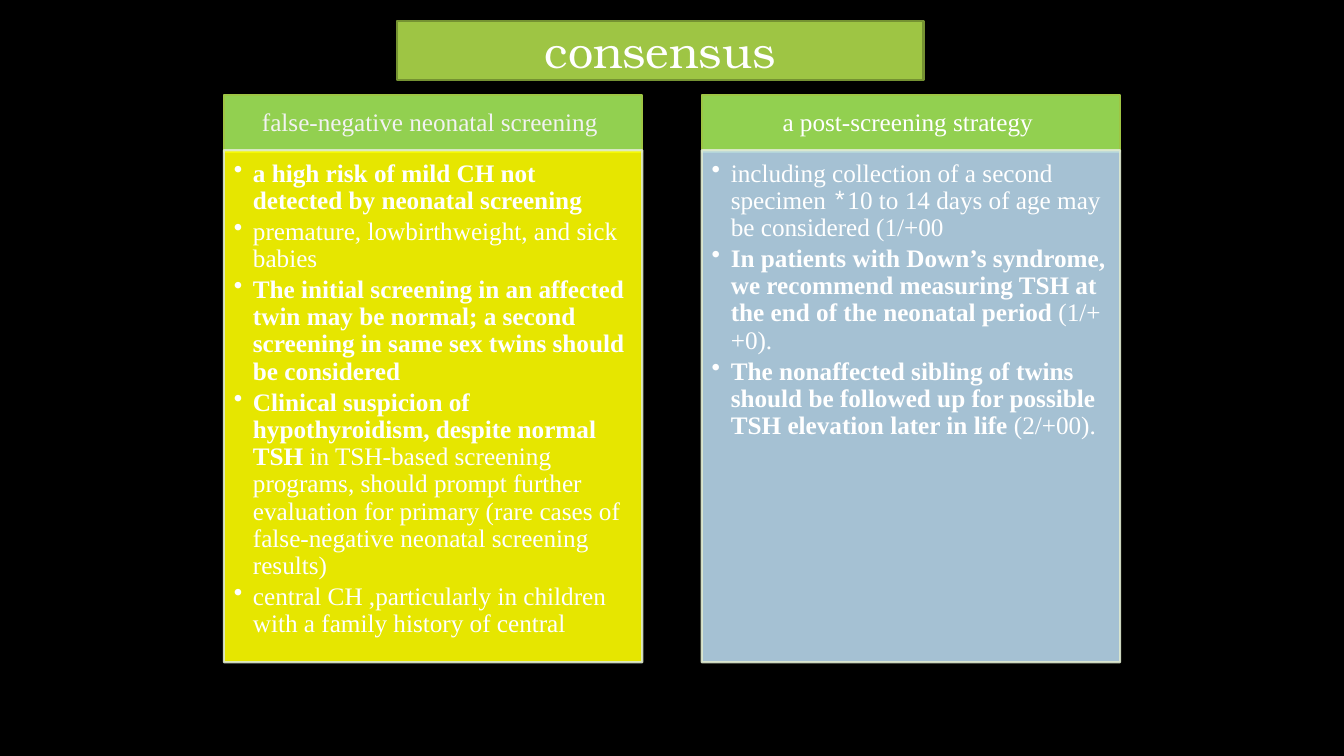
from dataclasses import dataclass

from lxml.etree import SubElement
from pptx import Presentation
from pptx.dml.color import RGBColor
from pptx.enum.shapes import MSO_SHAPE
from pptx.enum.text import MSO_ANCHOR, PP_ALIGN
from pptx.oxml.ns import qn
from pptx.util import Inches, Pt


@dataclass(frozen=True)
class Theme:
    background: str = "000000"
    white: str = "FFFFFF"
    soft_white: str = "F2F2F2"
    title_fill: str = "9EC544"
    title_line: str = "759232"
    header_fill: str = "92D050"
    header_line: str = "9EC544"
    yellow: str = "FFFF00"
    blue: str = "B7D7EB"
    body_line: str = "DFEACF"
    title_font: str = "TeX Gyre Bonum"
    text_font: str = "Times New Roman"
    symbol_font: str = "Courier New"
    title_size: int = 32
    text_size: int = 18
    line_width: float = 1.5
    body_opacity: int = 90


THEME = Theme()

COLUMN_LEFT, COLUMN_STEP, COLUMN_WIDTH = 2.22, 4.74, 4.15
HEADER_TOP, HEADER_HEIGHT = 0.94, 0.57
BODY_TOP, BODY_HEIGHT = 1.49, 5.08
BULLET_INDENT = 0.19

BOLD = {"bold": True}
PLAIN = {}
SYMBOL = {"name": THEME.symbol_font}

# Each column: header, header colour, body fill, bullets made of (text, format) spans
COLUMNS = [
    ("false-negative neonatal screening ", THEME.soft_white, THEME.yellow, [
        [("a high risk of mild CH not detected by neonatal screening", BOLD)],
        [("premature, lowbirthweight, and sick babies", PLAIN)],
        [("The initial screening in an affected twin may be normal; a second "
          "screening in same sex twins should be considered", BOLD)],
        [("Clinical suspicion of hypothyroidism, despite normal TSH ", BOLD),
         ("in TSH-based screening programs, should prompt further evaluation for "
          "primary (rare cases of false-negative neonatal screening results)", PLAIN)],
        [("central CH ,particularly in children with a family history of central", PLAIN)],
    ]),
    ("a post-screening strategy ", THEME.white, THEME.blue, [
        [("including collection of a second specimen ", PLAIN),
         ("*", SYMBOL),
         ("10 to 14 days of age may be considered (1/+00", PLAIN)],
        [("In patients with Down’s syndrome, we recommend measuring TSH at the end "
          "of the neonatal period", BOLD),
         (" (1/++0).", PLAIN)],
        [("The nonaffected sibling of twins should be followed up for possible TSH "
          "elevation later in life ", BOLD),
         ("(2/+00).", PLAIN)],
    ]),
]


def set_opacity(fill, percent):
    color = fill._xPr.find(qn("a:solidFill"))[0]
    SubElement(color, qn("a:alpha"), val=str(percent * 1000))


def add_box(page, bounds, fill, line, margins, anchor, opacity=100):
    box = page.shapes.add_shape(MSO_SHAPE.RECTANGLE, *map(Inches, bounds))
    box.shadow.inherit = False
    box.line.width = Pt(THEME.line_width)
    for paint, color in ((box.fill, fill), (box.line.fill, line)):
        paint.solid()
        paint.fore_color.rgb = RGBColor.from_string(color)
        if opacity < 100:
            set_opacity(paint, opacity)
    frame = box.text_frame
    frame.word_wrap = True
    frame.vertical_anchor = anchor
    for side, margin in zip(("left", "top", "right", "bottom"), margins):
        setattr(frame, f"margin_{side}", Inches(margin))
    return frame


def add_span(para, text, color=THEME.white, **changes):
    span = para.add_run()
    span.text = text
    values = {"name": THEME.text_font, "size": Pt(THEME.text_size), "bold": False}
    for key, value in (values | changes).items():
        setattr(span.font, key, value)
    span.font.color.rgb = RGBColor.from_string(color)


def format_paragraph(para, **values):
    for key, value in values.items():
        setattr(para, key, value)


def add_bullet(para, spans):
    properties = para._p.get_or_add_pPr()
    properties.set("marL", str(Inches(BULLET_INDENT)))
    properties.set("indent", str(-Inches(BULLET_INDENT)))
    SubElement(properties, qn("a:buChar"), char="•")
    format_paragraph(para, level=1, alignment=PP_ALIGN.LEFT, line_spacing=0.9,
                     space_after=Pt(0.15 * THEME.text_size))
    for text, changes in spans:
        add_span(para, text, **changes)


def add_title(page, text):
    frame = add_box(page, (3.94, 0.21, 5.22, 0.58), THEME.title_fill, THEME.title_line,
                    (0.1, 0.05, 0.1, 0.05), MSO_ANCHOR.MIDDLE)
    para = frame.paragraphs[0]
    format_paragraph(para, alignment=PP_ALIGN.CENTER)
    add_span(para, text, name=THEME.title_font, size=Pt(THEME.title_size))


def add_header(page, left, text, color):
    frame = add_box(page, (left, HEADER_TOP, COLUMN_WIDTH, HEADER_HEIGHT),
                    THEME.header_fill, THEME.header_line,
                    (0.14, 0.08, 0.14, 0.08), MSO_ANCHOR.MIDDLE)
    para = frame.paragraphs[0]
    format_paragraph(para, alignment=PP_ALIGN.CENTER, line_spacing=0.9)
    add_span(para, text, color)


def add_body(page, left, fill, bullets):
    frame = add_box(page, (left, BODY_TOP, COLUMN_WIDTH, BODY_HEIGHT),
                    fill, THEME.body_line, (0.1, 0.1, 0.14, 0.16),
                    MSO_ANCHOR.TOP, THEME.body_opacity)
    for index, spans in enumerate(bullets):
        para = frame.add_paragraph() if index else frame.paragraphs[0]
        add_bullet(para, spans)


def main():
    # Deck and page
    deck = Presentation()
    deck.slide_width, deck.slide_height = Inches(13.33), Inches(7.5)
    page = deck.slides.add_slide(deck.slide_layouts[6])
    page.background.fill.solid()
    page.background.fill.fore_color.rgb = RGBColor.from_string(THEME.background)

    # Two columns of recommendations
    for index, (header, color, fill, bullets) in enumerate(COLUMNS):
        left = COLUMN_LEFT + index * COLUMN_STEP
        add_header(page, left, header, color)
        add_body(page, left, fill, bullets)

    # Title banner
    add_title(page, "consensus")
    deck.save("out.pptx")


if __name__ == "__main__":
    main()
